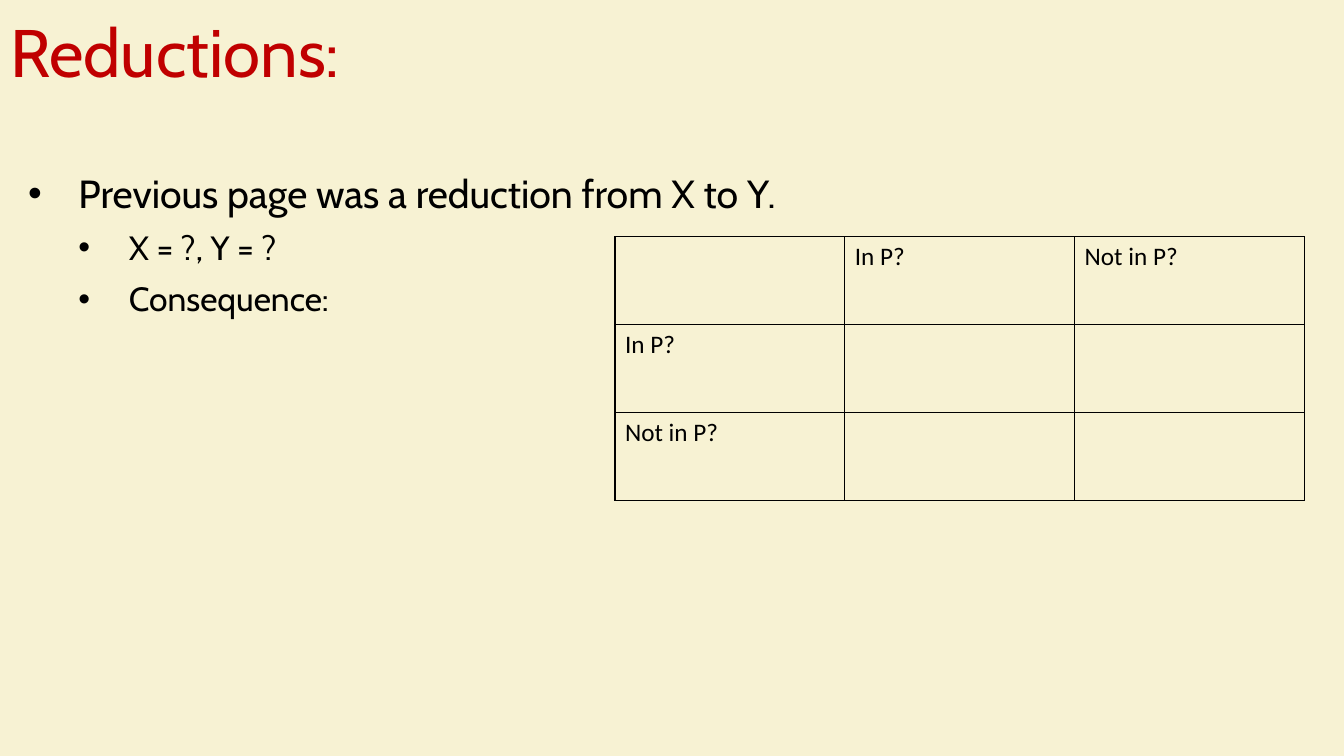
from dataclasses import dataclass

import pptx
import pptx.dml.color
import pptx.enum.text
import pptx.oxml
import pptx.oxml.ns
import pptx.util
from pptx.util import Pt

BLACK = "000000"
RED = "C00000"
CREAM = "F7F2D3"
BULLET_HANG = 36


@dataclass
class Bullet:
    text: str
    level: int
    size: float
    space_before: float


BULLETS = [
    Bullet("Previous page was a reduction from X to Y.", 0, 28, 10),
    Bullet("X = ?, Y = ?", 1, 24, 5),
    Bullet("Consequence:", 1, 24, 5),
]
TABLE_ROWS = [
    ["", "In P?", "Not in P?"],
    ["In P?", "", ""],
    ["Not in P?", "", ""],
]
COLUMN_WIDTH = 164.16
ROW_HEIGHT = 62.85


def color(value: str) -> pptx.dml.color.RGBColor:
    return pptx.dml.color.RGBColor.from_string(value)


def set_font(paragraph, name: str, size: float, value: str) -> None:
    paragraph.font.name = name
    paragraph.font.size = Pt(size)
    paragraph.font.bold = False
    paragraph.font.color.rgb = color(value)


def add_title(slide, text: str) -> None:
    title = slide.shapes.title
    title.left, title.top, title.width, title.height = Pt(0), Pt(0), Pt(960), Pt(80)
    frame = title.text_frame
    frame.text = text
    frame.vertical_anchor = pptx.enum.text.MSO_ANCHOR.MIDDLE
    paragraph = frame.paragraphs[0]
    paragraph.alignment = pptx.enum.text.PP_ALIGN.LEFT
    paragraph.line_spacing = 0.9
    set_font(paragraph, "Cabin", 48, RED)


def add_bullets(slide, bullets: list[Bullet]) -> None:
    box = slide.shapes.add_textbox(Pt(13), Pt(113.8), Pt(941), Pt(418.3))
    frame = box.text_frame
    frame.word_wrap = True
    for index, bullet in enumerate(bullets):
        paragraph = frame.add_paragraph() if index else frame.paragraphs[0]
        paragraph.text = bullet.text
        paragraph.level = bullet.level
        paragraph.line_spacing = 1.1
        paragraph.space_before = Pt(bullet.space_before)
        set_font(paragraph, "Cabin", bullet.size, BLACK)
        add_bullet_mark(paragraph, bullet.level)


def add_bullet_mark(paragraph, level: int) -> None:
    properties = paragraph._p.get_or_add_pPr()
    properties.set("marL", str(Pt(BULLET_HANG * (level + 1))))
    properties.set("indent", str(-Pt(BULLET_HANG)))
    namespace = pptx.oxml.ns.nsdecls("a")
    marks = [
        pptx.oxml.parse_xml(f'<a:buFont {namespace} typeface="Arial"/>'),
        pptx.oxml.parse_xml(f'<a:buChar {namespace} char="•"/>'),
    ]
    run_defaults = properties.find(pptx.oxml.ns.qn("a:defRPr"))
    for mark in marks:
        run_defaults.addprevious(mark)


def add_borders(cell, value: str, width: float) -> None:
    properties = cell._tc.get_or_add_tcPr()
    for side in ("lnL", "lnR", "lnT", "lnB"):
        properties.append(pptx.oxml.parse_xml(
            f'<a:{side} {pptx.oxml.ns.nsdecls("a")} w="{Pt(width)}">'
            f'<a:solidFill><a:srgbClr val="{value}"/></a:solidFill></a:{side}>'
        ))


def add_reduction_table(slide, rows: list[list[str]]) -> None:
    frame = slide.shapes.add_table(
        len(rows), len(rows[0]), Pt(439.3), Pt(169),
        Pt(COLUMN_WIDTH * len(rows[0])), Pt(ROW_HEIGHT * len(rows)),
    )
    table = frame.table
    table.first_row = False
    table.horz_banding = False
    for column in table.columns:
        column.width = Pt(COLUMN_WIDTH)
    for row, texts in zip(table.rows, rows):
        row.height = Pt(ROW_HEIGHT)
        for cell, text in zip(row.cells, texts):
            cell.text = text
            set_font(cell.text_frame.paragraphs[0], "Calibri", 18, BLACK)
            add_borders(cell, BLACK, 1)
            cell.fill.background()


def main() -> None:
    presentation = pptx.Presentation()
    presentation.slide_width, presentation.slide_height = Pt(960), Pt(540)
    slide = presentation.slides.add_slide(presentation.slide_layouts.get_by_name("Title Only"))
    slide.background.fill.solid()
    slide.background.fill.fore_color.rgb = color(CREAM)
    add_title(slide, "Reductions:")
    add_bullets(slide, BULLETS)
    add_reduction_table(slide, TABLE_ROWS)
    presentation.save("out.pptx")


if __name__ == "__main__":
    main()
